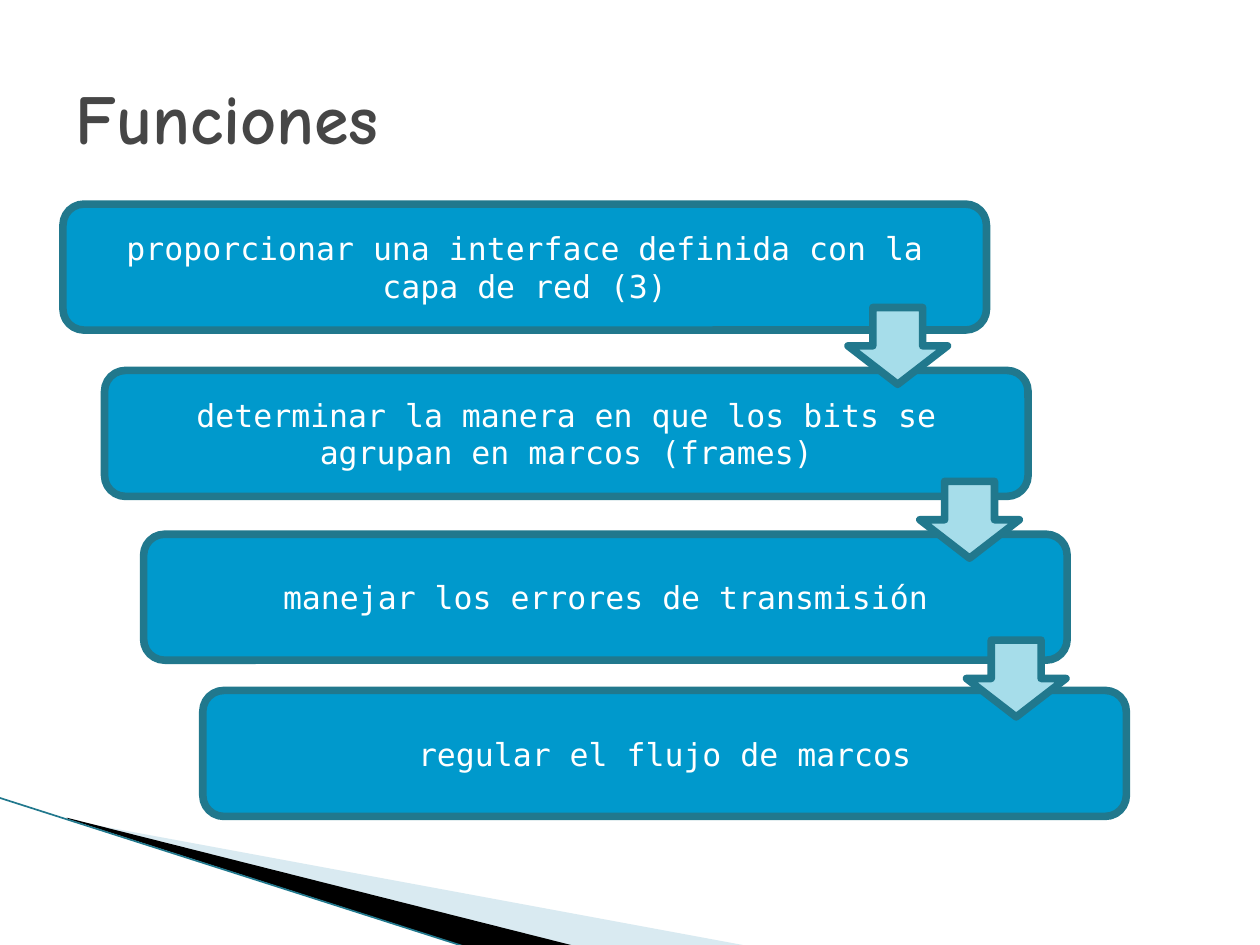
from dataclasses import dataclass
from typing import Any

from lxml import etree
from pptx import Presentation
from pptx import util as u
from pptx.dml.color import RGBColor
from pptx.enum import shapes, text
from pptx.oxml import ns

EMU_PER_PX = 9144
FONT_TITLE = "Comic Neue"
FONT_BODY = "DejaVu Sans Mono"
COLORS = {
    "title": "464646",
    "box": "0099CC",
    "border": "21788D",
    "arrow": "A6DDEA",
    "white": "FFFFFF",
    "pale": "A0CBDC",
    "black": "000000",
}
BOX_SIZE = (733, 100)
ARROW_SIZE = (79, 61)
BORDER_WIDTH = 4.33


@dataclass(frozen=True)
class Step:
    left: int
    top: int
    label: str


@dataclass(frozen=True)
class Arrow:
    left: int
    top: int


@dataclass(frozen=True)
class Wedge:
    points: tuple[tuple[int, int], ...]
    color: str
    opacity: int = 100


STEPS = (
    Step(50, 162, "proporcionar una interface definida con la capa de red (3)"),
    Step(83, 294, "determinar la manera en que los bits se agrupan en marcos (frames)"),
    Step(114, 424, "manejar los errores de transmisión"),
    Step(161, 548, "regular el flujo de marcos"),
)
ARROWS = (Arrow(673, 244), Arrow(730, 382), Arrow(767, 508))
WEDGES = (
    Wedge(((55, 651), (595, 751), (456, 751), (55, 650)), "pale", 40),
    Wedge(((53, 649), (457, 751), (372, 752), (54, 650)), "black"),
)


def px(value: int) -> u.Emu:
    return u.Emu(value * EMU_PER_PX)


def rgb(name: str) -> RGBColor:
    return RGBColor.from_string(COLORS[name])


def apply_format(target: Any, values: dict[str, Any]) -> None:
    for name, value in values.items():
        setattr(target, name, value)


def write_text(shape: Any, label: str, color: str, align: Any, font: dict[str, Any]) -> None:
    frame = shape.text_frame
    apply_format(frame, {
        "text": label,
        "word_wrap": True,
        "auto_size": text.MSO_AUTO_SIZE.NONE,
        "vertical_anchor": text.MSO_ANCHOR.MIDDLE,
    })
    paragraph = frame.paragraphs[0]
    paragraph.alignment = align
    apply_format(paragraph.font, font)
    paragraph.font.color.rgb = rgb(color)


def add_title(slide: Any, label: str) -> None:
    title = slide.shapes.title
    apply_format(title, {"left": px(50), "top": px(30), "width": px(900), "height": px(125)})
    write_text(title, label, "title", text.PP_ALIGN.LEFT,
               {"name": FONT_TITLE, "size": u.Pt(40), "bold": True})


def add_wedge(slide: Any, wedge: Wedge) -> None:
    builder = slide.shapes.build_freeform(*wedge.points[0], scale=EMU_PER_PX)
    builder.add_line_segments(wedge.points[1:], close=True)
    shape = builder.convert_to_shape()
    shape.shadow.inherit = False
    shape.fill.solid()
    shape.fill.fore_color.rgb = rgb(wedge.color)
    shape.line.fill.background()
    if wedge.opacity < 100:
        color = shape.fill._xPr.find(".//" + ns.qn("a:srgbClr"))
        etree.SubElement(color, ns.qn("a:alpha"), val=str(wedge.opacity * 1000))


def add_edge(slide: Any) -> None:
    line = slide.shapes.add_connector(
        shapes.MSO_CONNECTOR.STRAIGHT, px(-1), px(633), px(371), px(752))
    line.line.color.rgb = rgb("border")
    line.line.width = u.Pt(0.95)
    etree.SubElement(line._element.spPr, ns.qn("a:effectLst"))


def add_block(slide: Any, kind: Any, left: int, top: int,
              size: tuple[int, int], color: str) -> Any:
    shape = slide.shapes.add_shape(kind, px(left), px(top), px(size[0]), px(size[1]))
    shape.shadow.inherit = False
    shape.fill.solid()
    shape.fill.fore_color.rgb = rgb(color)
    shape.line.color.rgb = rgb("border")
    shape.line.width = u.Pt(BORDER_WIDTH)
    return shape


def main() -> None:
    presentation = Presentation()
    apply_format(presentation, {"slide_width": px(1000), "slide_height": px(750)})
    slide = presentation.slides.add_slide(presentation.slide_layouts[5])
    for wedge in WEDGES:
        add_wedge(slide, wedge)
    add_edge(slide)
    add_title(slide, "Funciones")
    for step in STEPS:
        box = add_block(slide, shapes.MSO_SHAPE.ROUNDED_RECTANGLE,
                        step.left, step.top, BOX_SIZE, "box")
        write_text(box, step.label, "white", text.PP_ALIGN.CENTER,
                   {"name": FONT_BODY, "size": u.Pt(18)})
    for arrow in ARROWS:
        add_block(slide, shapes.MSO_SHAPE.DOWN_ARROW,
                  arrow.left, arrow.top, ARROW_SIZE, "arrow")
    presentation.save("out.pptx")


if __name__ == "__main__":
    main()
